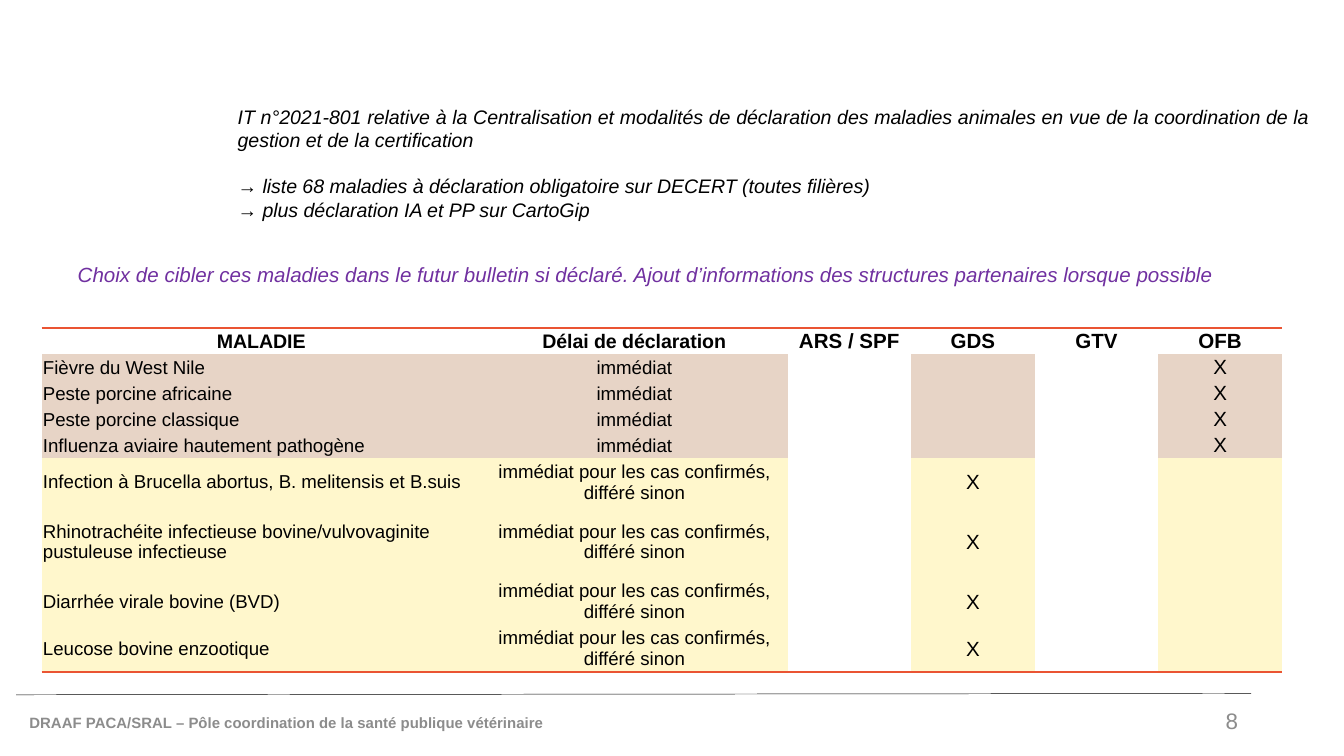
from lxml import etree
from pptx import Presentation
from pptx.dml.color import RGBColor
from pptx.enum.shapes import MSO_CONNECTOR
from pptx.enum.text import MSO_ANCHOR, PP_ALIGN
from pptx.oxml.ns import qn
from pptx.util import Inches, Pt

LEFT, MID, RIGHT, JUST = PP_ALIGN.LEFT, PP_ALIGN.CENTER, PP_ALIGN.RIGHT, PP_ALIGN.JUSTIFY
TOP, CENTER = MSO_ANCHOR.TOP, MSO_ANCHOR.MIDDLE
STRAIGHT = MSO_CONNECTOR.STRAIGHT
PLAIN = "{2D5ABB26-0587-4C30-8999-92F81FD0307C}"  # table style without grid

BLACK, GREY, PURPLE, WHITE = "000000", "8C8C8C", "7030A0", "FFFFFF"
PINK, CREAM, ORANGE = "E7D4C6", "FFF7CC", "EA5433"

HEAD = ["MALADIE", "Délai de déclaration", "ARS / SPF", "GDS", "GTV", "OFB"]
COLS = [3.27, 2.28] + [0.92] * 4
NOW = "immédiat"
LATER = "immédiat pour les cas confirmés, différé sinon"
URGENT = ["Fièvre du West Nile", "Peste porcine africaine", "Peste porcine classique",
          "Influenza aviaire hautement pathogène"]
CATTLE = ["Infection à Brucella abortus, B. melitensis et B.suis",
          "Rhinotrachéite infectieuse bovine/vulvovaginite pustuleuse infectieuse",
          "Diarrhée virale bovine (BVD)", "Leucose bovine enzootique"]
ROWS = [0.19] * 5 + [0.35, 0.54, 0.35, 0.35]


def color(code):
    return RGBColor.from_string(code)


class Page:
    font = "Arial"

    def __init__(self, deck):
        self.slide = deck.slides.add_slide(deck.slide_layouts[6])
        self.shapes = self.slide.shapes

    def style(self, para, size, hue=BLACK, align=LEFT, bold=False, italic=False):
        para.alignment = align
        for run in para.runs:
            font = run.font
            font.name, font.size = self.font, Pt(size)
            font.bold, font.italic = bold, italic
            font.color.rgb = color(hue)

    def text(self, box, lines, size, anchor=TOP, gaps=None, **look):
        """Write one paragraph a line; gaps maps a line index to its space before."""
        frame = self.shapes.add_textbox(*map(Inches, box)).text_frame
        frame.word_wrap = True
        frame.vertical_anchor = anchor
        frame.text = "\n".join(lines)
        for i, para in enumerate(frame.paragraphs):
            self.style(para, size, **look)
            if gaps and i in gaps:
                para.space_before = Pt(gaps[i])

    def line(self, x1, y1, x2, y2, hue, width):
        rule = self.shapes.add_connector(STRAIGHT, *map(Inches, (x1, y1, x2, y2)))
        rule.line.color.rgb = color(hue)
        rule.line.width = Pt(width)
        etree.SubElement(rule._element.spPr, qn("a:effectLst"))

    def table(self, x, y, cols, rows):
        frame = self.shapes.add_table(len(rows), len(cols), Inches(x), Inches(y),
                                      Inches(sum(cols)), Inches(sum(rows)))
        grid = frame.table
        grid.first_row = grid.horz_banding = False
        grid._tbl.tblPr.find(qn("a:tableStyleId")).text = PLAIN
        for col, width in zip(grid.columns, cols):
            col.width = Inches(width)
        for row, height in zip(grid.rows, rows):
            row.height = Inches(height)
        return grid

    def cell(self, cell, text, size, fill, **look):
        cell.margin_left = cell.margin_right = cell.margin_top = Inches(0.01)
        cell.margin_bottom = 0
        cell.vertical_anchor = CENTER
        para = cell.text_frame.paragraphs[0]
        para.text = text
        self.style(para, size, **look)
        if not text:  # keeps an empty cell from stretching its row
            etree.SubElement(para._p, qn("a:endParaRPr"), sz=str(size * 100))
        if fill:
            cell.fill.solid()
            cell.fill.fore_color.rgb = color(fill)
        else:
            cell.fill.background()

    def border(self, cell, side, hue, width):
        edge = etree.Element(qn("a:" + side), w=str(Pt(width)))
        fill = etree.SubElement(edge, qn("a:solidFill"))
        etree.SubElement(fill, qn("a:srgbClr"), val=hue)
        cell._tc.get_or_add_tcPr().insert(0, edge)


def main():
    deck = Presentation()
    deck.slide_width = Inches(10)
    deck.slide_height = deck.slide_width * 9 // 16
    page = Page(deck)

    page.line(0.12, 5.17, 9.31, 5.16, BLACK, 0.25)
    page.text((0.12, 5.23, 4.81, 0.3),
              ["DRAAF PACA/SRAL – Pôle coordination de la santé publique vétérinaire"],
              8, CENTER, hue=GREY, bold=True)
    page.text((8.69, 5.21, 0.62, 0.3), ["8"], 12, CENTER, hue=GREY, align=RIGHT)
    page.text((1.67, 0.73, 8.18, 0.98),
              ["IT n°2021-801 relative à la Centralisation et modalités de déclaration des "
               "maladies animales en vue de la coordination de la gestion et de la certification",
               "→ liste 68 maladies à déclaration obligatoire sur DECERT (toutes filières)",
               "→ plus déclaration IA et PP sur CartoGip"],
              10.5, gaps={1: 12}, align=JUST, italic=True)

    grid = page.table(0.31, 2.44, COLS, ROWS)
    for c, name in enumerate(HEAD):
        page.cell(grid.cell(0, c), name, 10.5 if c < 2 else 11, None, align=MID, bold=True)
        page.border(grid.cell(0, c), "lnT", ORANGE, 1)

    cases = [(name, NOW, "OFB", PINK) for name in URGENT]
    cases += [(name, LATER, "GDS", CREAM) for name in CATTLE]
    for r, (name, delay, body, tint) in enumerate(cases, 1):
        marks = ["X" if head == body else "" for head in HEAD[2:]]
        fills = [tint, tint, None, tint, WHITE, tint]
        for c, (text, fill) in enumerate(zip([name, delay] + marks, fills)):
            page.cell(grid.cell(r, c), text, 10 if c < 2 else 11, fill,
                      align=MID if c else LEFT)
    for c in range(len(COLS)):
        page.border(grid.cell(len(cases), c), "lnB", ORANGE, 1)

    page.text((0.48, 1.9, 9.26, 0.29),
              ["Choix de cibler ces maladies dans le futur bulletin si déclaré. Ajout "
               "d’informations des structures partenaires lorsque possible"],
              11, hue=PURPLE, align=JUST, italic=True)
    deck.save("out.pptx")


if __name__ == "__main__":
    main()
